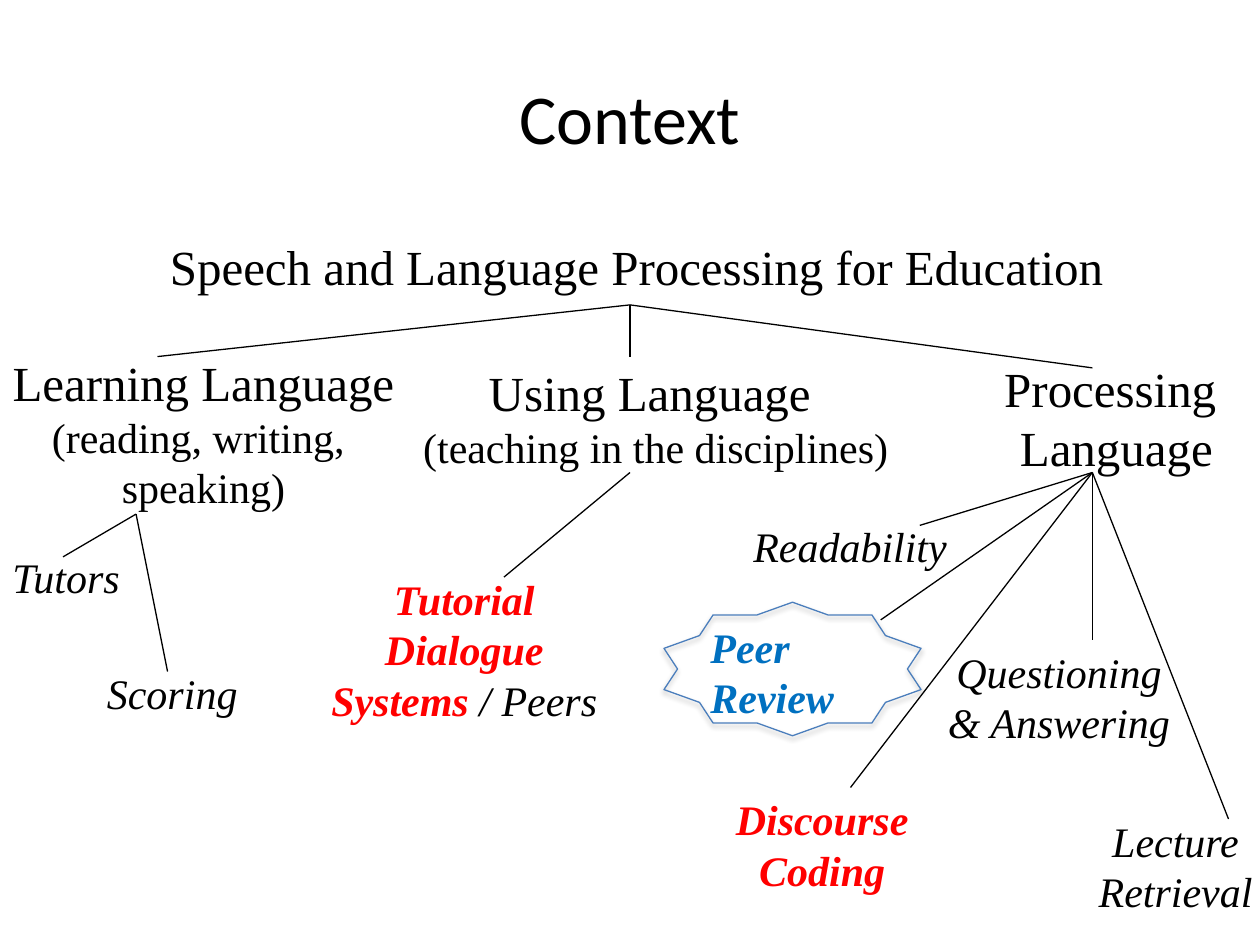
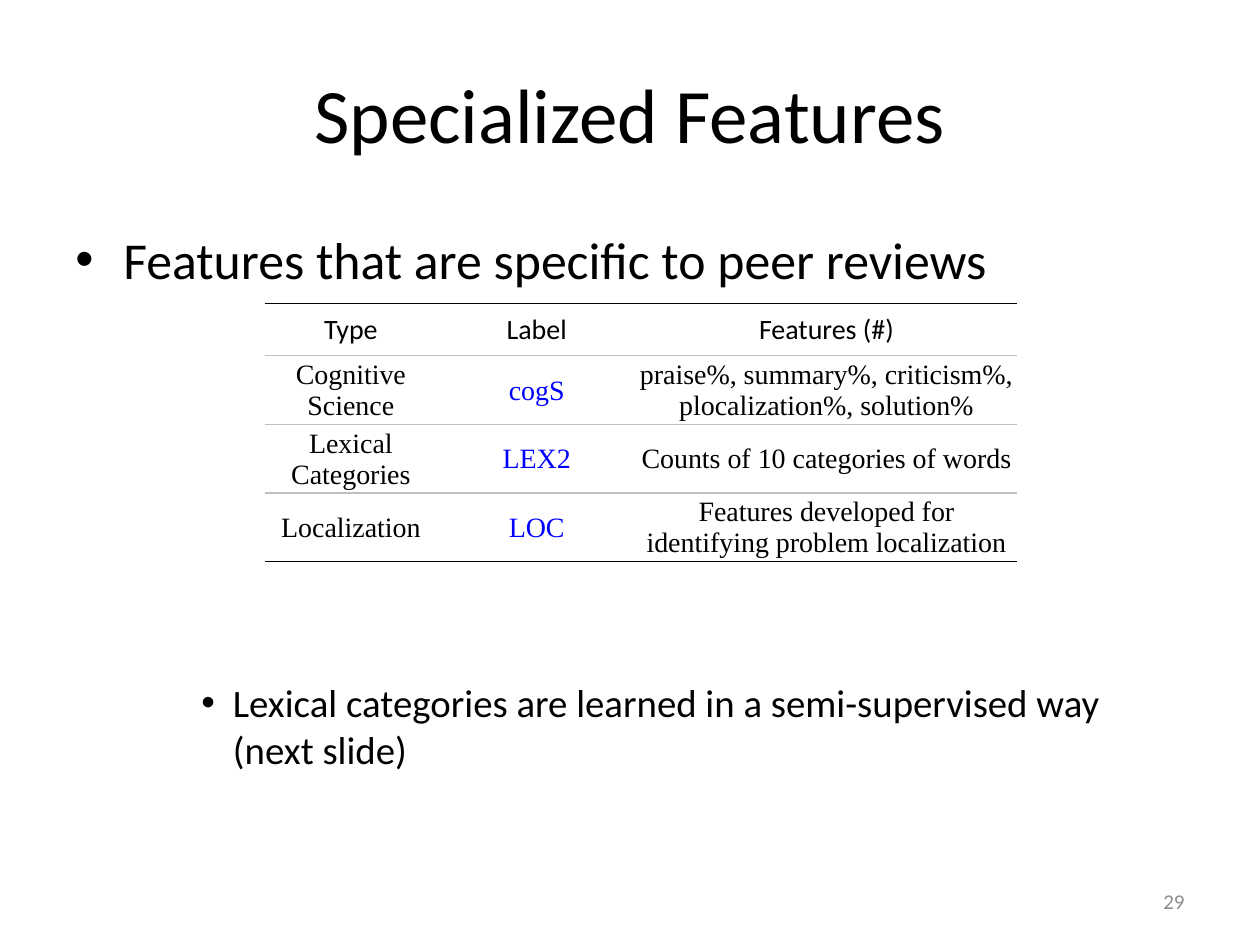
"""Build two slides: a research context tree and a table of specialized features."""
from dataclasses import dataclass
from typing import Any

import lxml.etree
import pptx
import pptx.dml.color
import pptx.enum.shapes
import pptx.enum.text
import pptx.oxml
import pptx.oxml.ns
import pptx.util

Inches = pptx.util.Inches
Pt = pptx.util.Pt
RGBColor = pptx.dml.color.RGBColor
Align = pptx.enum.text.PP_ALIGN
Anchor = pptx.enum.text.MSO_ANCHOR

BLACK = RGBColor(0x00, 0x00, 0x00)
WHITE = RGBColor(0xFF, 0xFF, 0xFF)
RED = RGBColor(0xFF, 0x00, 0x00)
PEER_BLUE = RGBColor(0x00, 0x70, 0xC0)
STAR_BLUE = RGBColor(0x4B, 0x7E, 0xBC)
LABEL_BLUE = RGBColor(0x00, 0x00, 0xFF)
RULE_GREY = RGBColor(0xBF, 0xBF, 0xBF)
PAGE_GREY = RGBColor(0x8C, 0x8C, 0x8C)
SANS = "Calibri"
SERIF = "Times New Roman"
DRAWING_NAMESPACE = pptx.oxml.ns.nsdecls("a")


@dataclass(frozen=True)
class Run:
    """A stretch of text in one format."""

    text: str
    size: float = 24
    color: RGBColor = BLACK
    bold: bool = False
    italic: bool = False
    name: str = SERIF


@dataclass(frozen=True)
class TextBox:
    """A text box with its place in inches and its paragraphs of runs."""

    place: tuple[float, float, float, float]
    paragraphs: list[list[Run]]
    alignment: Any = Align.CENTER
    anchor: Any = Anchor.TOP
    wrap: bool = False


@dataclass(frozen=True)
class Branch:
    """A point of the tree and the points it leads to, in inches."""

    origin: tuple[float, float]
    ends: list[tuple[float, float]]


def heading(text: str) -> list[Run]:
    """Return a paragraph in the size of the main tree levels."""
    return [Run(text, size=28)]


def topic(text: str, color: RGBColor = BLACK, bold: bool = False) -> list[Run]:
    """Return a paragraph in the italics of the tree leaves."""
    return [Run(text, color=color, bold=bold, italic=True)]


TREE_LABELS = [
    TextBox((1.25, 1.83, 7.69, 0.57), [heading("Speech and Language Processing for Education")],
            Align.LEFT),
    TextBox((0, 2.75, 3.23, 1.77),
            [heading("Learning Language"), [Run("(reading, writing, ")], [Run("speaking)")]]),
    TextBox((3.24, 2.83, 3.93, 0.98),
            [heading("Using Language "), [Run("(teaching in the disciplines)")]]),
    TextBox((7.87, 2.8, 1.98, 1.03), [heading("Processing "), heading("Language")]),
    TextBox((0, 4.33, 1.07, 0.5), [topic("Tutors")], Align.LEFT),
    TextBox((0.75, 5.25, 1.24, 0.5), [topic("Scoring")], Align.LEFT),
    TextBox((5.88, 4.08, 1.75, 0.5), [topic("Readability")], Align.LEFT),
    TextBox((2.37, 4.5, 2.63, 1.31),
            [topic("Tutorial Dialogue", RED, True),
             topic("Systems ", RED, True) + topic("/ Peers")], wrap=True),
    TextBox((5.73, 6.25, 1.59, 0.91),
            [topic("Discourse", RED, True), topic("Coding", RED, True)]),
    TextBox((8.62, 6.42, 1.42, 0.9), [topic("Lecture"), topic("Retrieval")]),
    TextBox((7.42, 5.08, 1.97, 0.9), [topic("Questioning"), topic("& Answering")]),
    TextBox((5.54, 4.88, 1.88, 0.91), [topic("Peer Review", PEER_BLUE, True)],
            Align.LEFT, wrap=True),
]

BRANCHES = [
    Branch((5, 2.42), [(1.25, 2.83), (5, 2.83), (8.67, 2.92)]),
    Branch((1.08, 4.08), [(0.5, 4.42), (1.33, 5.33)]),
    Branch((5, 3.75), [(4, 4.58)]),
    Branch((8.67, 3.75), [(7.3, 4.17), (8.67, 5.08), (6.75, 6.25), (9.75, 6.5), (6.99, 4.92)]),
]

COLUMN_WIDTHS = [1.37, 1.58, 3.02]
ROW_HEIGHTS = [0.41, 0.55, 0.45, 0.45]
FEATURE_ROWS = [
    ("Type", "Label", "Features (#)"),
    ("Cognitive Science", "cogS", "praise%, summary%, criticism%, plocalization%, solution%"),
    ("Lexical Categories", "LEX2", "Counts of 10 categories of words"),
    ("Localization", "LOC", "Features developed for identifying problem localization"),
]


def apply_format(target: Any, values: dict[str, Any]) -> None:
    """Set each named attribute on the target."""
    for name, value in values.items():
        setattr(target, name, value)


def add_runs(paragraph: Any, runs: list[Run]) -> None:
    """Append formatted runs to a paragraph."""
    for run in runs:
        text_run = paragraph.add_run()
        text_run.text = run.text
        apply_format(text_run.font, {"name": run.name, "size": Pt(run.size),
                                     "bold": run.bold, "italic": run.italic})
        text_run.font.color.rgb = run.color


def add_text(slide: Any, box: TextBox) -> Any:
    """Draw a text box and return its text frame."""
    frame = slide.shapes.add_textbox(*map(Inches, box.place)).text_frame
    apply_format(frame, {"word_wrap": box.wrap, "vertical_anchor": box.anchor})
    for index, runs in enumerate(box.paragraphs):
        paragraph = frame.add_paragraph() if index else frame.paragraphs[0]
        paragraph.alignment = box.alignment
        add_runs(paragraph, runs)
    return frame


def add_title(slide: Any, text: str, top: float, size: float) -> None:
    """Draw the centred slide title."""
    add_text(slide, TextBox((0.5, top, 9, 1.25), [[Run(text, size, name=SANS)]],
                            anchor=Anchor.MIDDLE, wrap=True))


def add_bullet(slide: Any, run: Run, place: tuple[float, float, float, float],
               margin: float, hanging: float) -> None:
    """Draw a bulleted paragraph with a hanging indent."""
    frame = add_text(slide, TextBox(place, [[run]], Align.LEFT, wrap=True))
    properties = frame.paragraphs[0]._p.get_or_add_pPr()
    properties.set("marL", str(Inches(margin)))
    properties.set("indent", str(-Inches(hanging)))
    for tag, name, value in (("a:buFont", "typeface", "Arial"), ("a:buChar", "char", "•")):
        lxml.etree.SubElement(properties, pptx.oxml.ns.qn(tag)).set(name, value)


def add_branch(slide: Any, branch: Branch) -> None:
    """Draw the lines that leave one point of the tree."""
    for end in branch.ends:
        connector = slide.shapes.add_connector(
            pptx.enum.shapes.MSO_CONNECTOR.STRAIGHT, *map(Inches, branch.origin + end))
        connector.line.color.rgb = BLACK
        connector.line.width = Pt(0.75)
        lxml.etree.SubElement(connector._element.spPr, pptx.oxml.ns.qn("a:effectLst"))


def add_star(slide: Any) -> None:
    """Draw the outlined star around the peer review topic."""
    star = slide.shapes.add_shape(pptx.enum.shapes.MSO_SHAPE.STAR_10_POINT,
                                  *map(Inches, (5.27, 4.78, 2.04, 1.06)))
    star.fill.background()
    star.line.color.rgb = STAR_BLUE
    star.line.width = Pt(0.75)
    star.shadow.inherit = False
    effects = star._element.spPr.find(pptx.oxml.ns.qn("a:effectLst"))
    effects.append(pptx.oxml.parse_xml(
        f'<a:outerShdw {DRAWING_NAMESPACE} blurRad="{Pt(3.1)}" dist="{Pt(1.8)}" dir="5400000" '
        f'rotWithShape="0"><a:srgbClr val="{BLACK}"><a:alpha val="35000"/></a:srgbClr>'
        '</a:outerShdw>'))


def set_borders(cell: Any, is_first: bool, is_last: bool) -> None:
    """Rule a cell above and below, with thin black rules at the table's ends."""
    outer, inner = (BLACK, 0.25), (RULE_GREY, 1)
    rules = {"lnL": None, "lnR": None, "lnT": outer if is_first else inner,
             "lnB": outer if is_last else inner}
    properties = cell._tc.get_or_add_tcPr()
    for index, (tag, rule) in enumerate(rules.items()):
        width, fill = 0, "<a:noFill/>"
        if rule:
            width = Pt(rule[1])
            fill = f'<a:solidFill><a:srgbClr val="{rule[0]}"/></a:solidFill>'
        properties.insert(index, pptx.oxml.parse_xml(
            f'<a:{tag} {DRAWING_NAMESPACE} w="{width}">{fill}</a:{tag}>'))


def add_feature_table(slide: Any) -> None:
    """Draw the table of feature types."""
    size = (sum(COLUMN_WIDTHS), sum(ROW_HEIGHTS))
    table = slide.shapes.add_table(len(ROW_HEIGHTS), len(COLUMN_WIDTHS),
                                   *map(Inches, (2.1, 2.41) + size)).table
    apply_format(table, {"first_row": False, "horz_banding": False})
    for column, width in zip(table.columns, COLUMN_WIDTHS):
        column.width = Inches(width)
    for row, height in zip(table.rows, ROW_HEIGHTS):
        row.height = Inches(height)
    for row_index, texts in enumerate(FEATURE_ROWS):
        for column_index, text in enumerate(texts):
            cell = table.cell(row_index, column_index)
            apply_format(cell, {"vertical_anchor": Anchor.MIDDLE, "margin_left": Inches(0.01),
                                "margin_right": Inches(0.01), "margin_top": Inches(0.01),
                                "margin_bottom": 0})
            cell.fill.solid()
            cell.fill.fore_color.rgb = WHITE
            is_header = row_index == 0
            color = LABEL_BLUE if column_index == 1 and not is_header else BLACK
            paragraph = cell.text_frame.paragraphs[0]
            paragraph.alignment = Align.CENTER
            add_runs(paragraph, [Run(text, 16, color, name=SANS if is_header else SERIF)])
            set_borders(cell, is_header, row_index == len(FEATURE_ROWS) - 1)


def build_context_slide(slide: Any) -> None:
    """Draw the tree of research topics."""
    add_title(slide, "Context", 0.3, 40)
    for label in TREE_LABELS:
        add_text(slide, label)
    for branch in BRANCHES:
        add_branch(slide, branch)
    add_star(slide)


def build_features_slide(slide: Any) -> None:
    """Draw the feature table with its two bullets."""
    add_title(slide, "Specialized Features", 0.27, 44)
    add_bullet(slide, Run("Features that are specific to peer reviews", 29.6, name=SANS),
               (0.5, 1.76, 8.79, 0.6), 0.38, 0.38)
    add_feature_table(slide)
    add_bullet(slide, Run("Lexical categories are learned in a semi-supervised way (next slide)",
                          22.2, name=SANS), (0.5, 5.34, 8.79, 0.85), 1.25, 0.25)
    add_text(slide, TextBox((7.17, 6.95, 2.33, 0.4), [[Run("29", 12, PAGE_GREY, name=SANS)]],
                            Align.RIGHT, Anchor.MIDDLE, True))


def main() -> None:
    """Build and save the presentation."""
    presentation = pptx.Presentation()
    apply_format(presentation, {"slide_width": Inches(10), "slide_height": Inches(7.5)})
    for build in (build_context_slide, build_features_slide):
        build(presentation.slides.add_slide(presentation.slide_layouts[6]))
    presentation.save("out.pptx")


if __name__ == "__main__":
    main()
